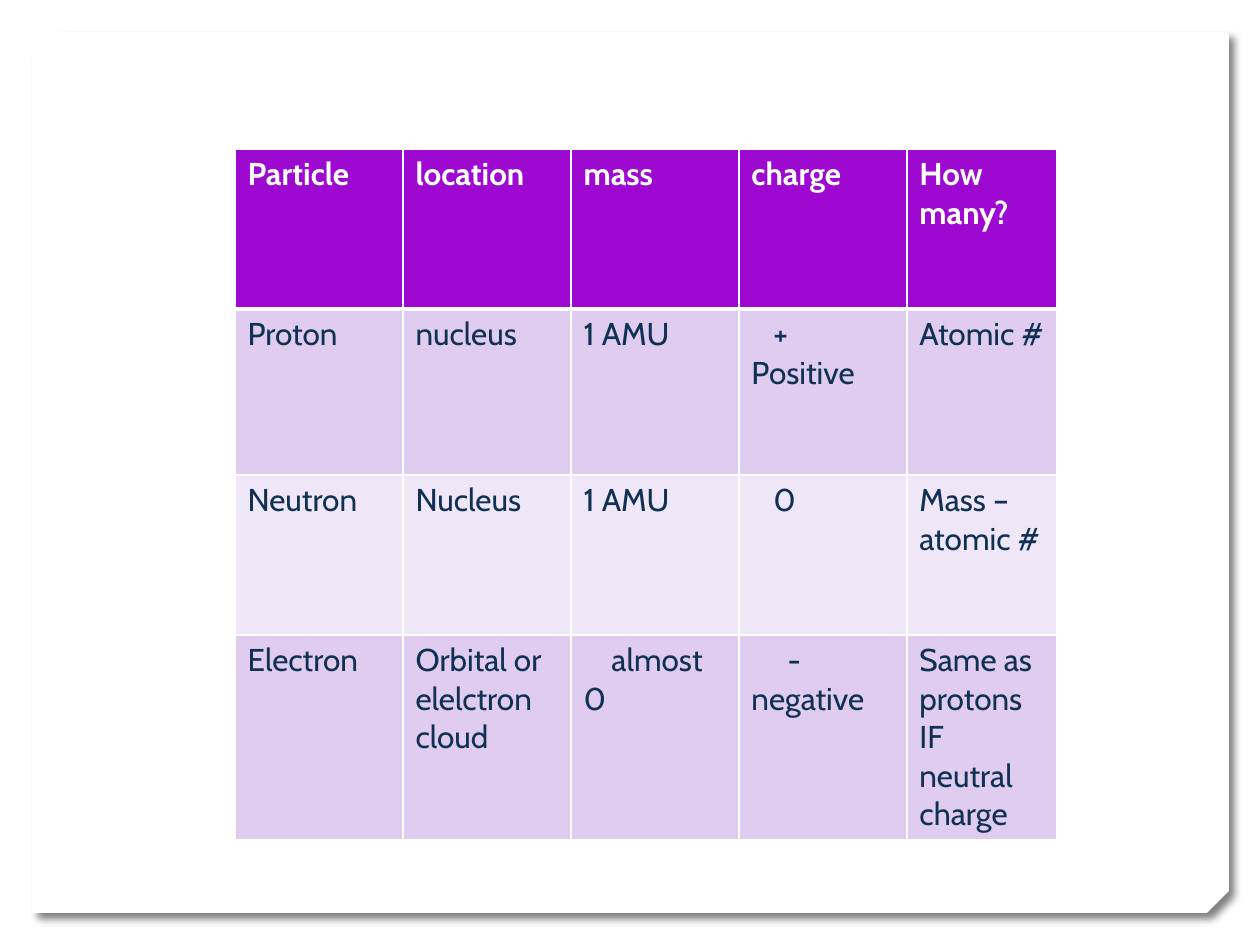
from lxml.etree import SubElement
from pptx import Presentation
from pptx.dml.color import RGBColor
from pptx.enum.shapes import MSO_SHAPE
from pptx.oxml.ns import qn
from pptx.util import Pt

COLORS = {
    "white": "FFFFFF",
    "shadow": "000000",
    "header": "9D09D1",
    "odd_row": "DFCCEE",
    "even_row": "EFE7F7",
    "text": "103154",
}
FONT = "Cabin"
COLUMN_WIDTHS = [168, 168, 168, 168, 150]
ROW_HEIGHTS = [160, 166, 160, 166]
PARTICLES = [
    ["Particle", "location", "mass", "charge", "How many?"],
    ["Proton", "nucleus", "1 AMU", "+\nPositive", "Atomic #"],
    ["Neutron", "Nucleus", "1 AMU", "0", "Mass – atomic #"],
    ["Electron", "Orbital or elelctron cloud", "almost 0", "-\nnegative",
     "Same as protons IF neutral charge"],
]
FIRST_LINE_INDENTS = {(1, 3): 22, (2, 3): 22, (3, 2): 28, (3, 3): 36}


def px(length):
    return round(length * 914400 / 126)


def rgb(name):
    return RGBColor.from_string(COLORS[name])


def add_color(parent, name):
    fill = SubElement(parent, qn("a:solidFill"))
    return SubElement(fill, qn("a:srgbClr"), val=COLORS[name])


def add_shadow(shape):
    shape.shadow.inherit = False
    effects = shape._element.spPr.find(qn("a:effectLst"))
    shadow = SubElement(effects, qn("a:outerShdw"), blurRad=str(Pt(4)),
                        dist=str(Pt(5)), dir=str(45 * 60000),
                        algn="tl", rotWithShape="0")
    color = SubElement(shadow, qn("a:srgbClr"), val=COLORS["shadow"])
    SubElement(color, qn("a:alpha"), val="50000")


def add_page(slide):
    page = slide.shapes.add_shape(MSO_SHAPE.SNIP_2_DIAG_RECTANGLE,
                                  px(32), px(32), px(1197), px(881))
    page.adjustments[0] = 0.025
    page.adjustments[1] = 0
    page.fill.solid()
    page.fill.fore_color.rgb = rgb("white")
    page.line.fill.background()
    add_shadow(page)


def set_borders(cell, is_header, below_header):
    properties = cell._tc.get_or_add_tcPr()
    widths = {
        "L": 1,
        "R": 1,
        "T": 3 if below_header else 1,
        "B": 3 if is_header else 1,
    }
    for side, width in widths.items():
        border = SubElement(properties, qn(f"a:ln{side}"), w=str(Pt(width)))
        add_color(border, "white")


def write_cell(cell, words, is_header, indent):
    frame = cell.text_frame
    for number, line in enumerate(words.split("\n")):
        paragraph = frame.add_paragraph() if number else frame.paragraphs[0]
        if indent and number == 0:
            layout = paragraph._p.get_or_add_pPr()
            layout.set("marL", "0")
            layout.set("indent", str(px(indent)))
        run = paragraph.add_run()
        run.text = line
        run.font.name = FONT
        run.font.size = Pt(18)
        run.font.bold = is_header
        run.font.color.rgb = rgb("white" if is_header else "text")


def add_particle_table(slide):
    table = slide.shapes.add_table(
        len(ROW_HEIGHTS), len(COLUMN_WIDTHS), px(235), px(149),
        px(sum(COLUMN_WIDTHS)), px(sum(ROW_HEIGHTS))).table
    for column, width in zip(table.columns, COLUMN_WIDTHS):
        column.width = px(width)
    for row, height in zip(table.rows, ROW_HEIGHTS):
        row.height = px(height)
    for row, facts in enumerate(PARTICLES):
        is_header = row == 0
        band = "header" if is_header else "odd_row" if row % 2 else "even_row"
        for column, words in enumerate(facts):
            cell = table.cell(row, column)
            set_borders(cell, is_header, row == 1)
            cell.fill.solid()
            cell.fill.fore_color.rgb = rgb(band)
            write_cell(cell, words, is_header,
                       FIRST_LINE_INDENTS.get((row, column), 0))


def main():
    deck = Presentation()
    deck.slide_width = px(1260)
    deck.slide_height = px(945)
    slide = deck.slides.add_slide(deck.slide_layouts[6])
    slide.background.fill.solid()
    slide.background.fill.fore_color.rgb = rgb("white")
    add_page(slide)
    add_particle_table(slide)
    deck.save("out.pptx")


if __name__ == "__main__":
    main()
